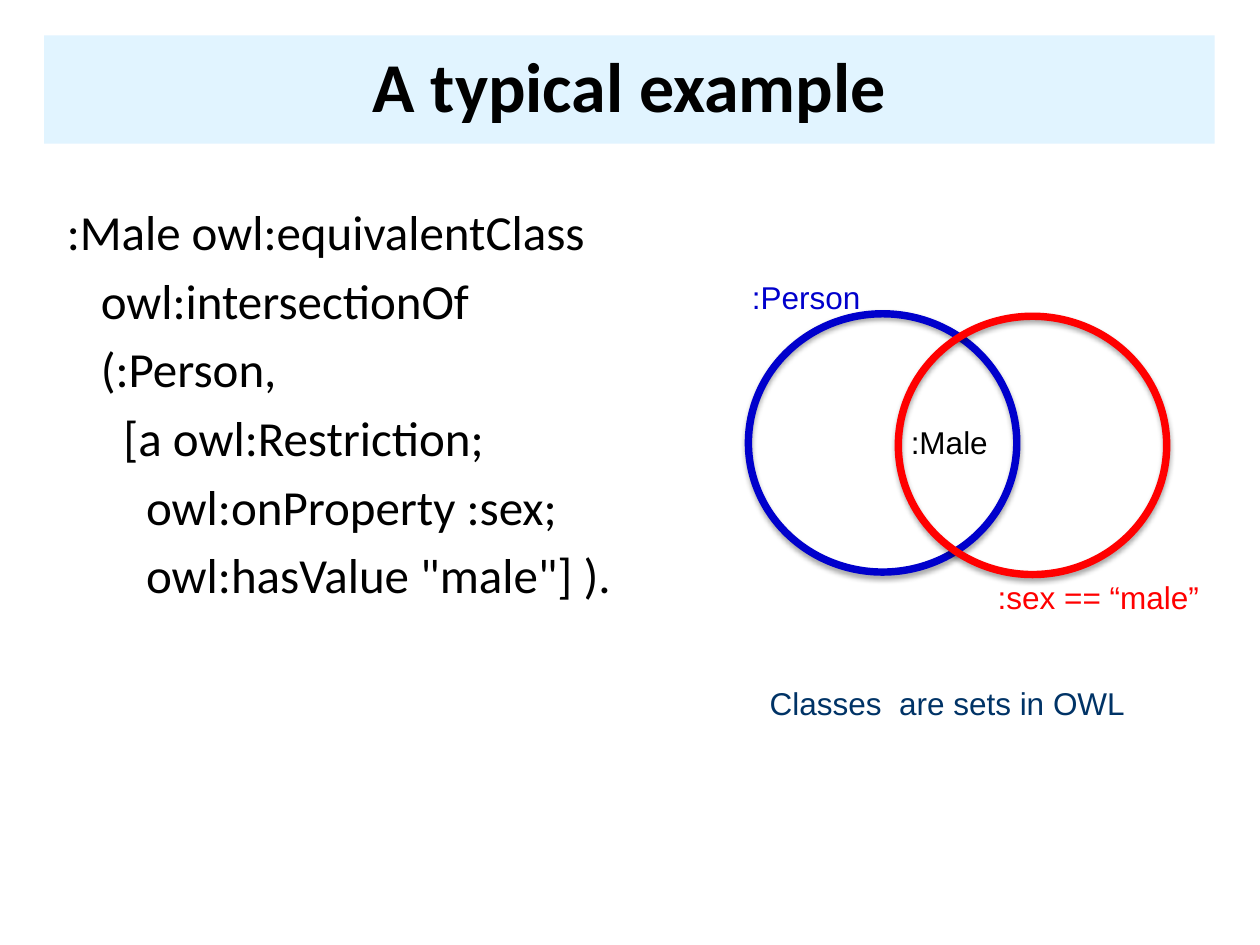
from lxml import etree
from pptx import Presentation
from pptx.dml.color import RGBColor
from pptx.enum import shapes, text
from pptx.oxml.ns import qn
from pptx.util import Inches, Pt

COLORS = {
    "black": "000000",
    "banner": "E1F4FF",
    "person": "0000CC",
    "male": "FF0000",
    "note": "003366",
}


def rgb(name):
    return RGBColor.from_string(COLORS[name])


def write(paragraph, words, *, size=18, font="Arial", color="black",
          bold=False, align=None, line_spacing=None):
    """Add formatted words to a paragraph."""
    run = paragraph.add_run()
    run.text = words
    run.font.size = Pt(size)
    run.font.name = font
    run.font.bold = bold
    run.font.color.rgb = rgb(color)
    if align is not None:
        paragraph.alignment = align
    if line_spacing is not None:
        paragraph.line_spacing = line_spacing


class SlideBuilder:
    heading_font = "Calibri"
    indent_step = 0.09  # width of one indent unit in the code
    circle_size = (2.13, 2.05)
    outline = 4.25

    def __init__(self, slide):
        self.slide = slide

    @staticmethod
    def place(shape, left, top, width, height):
        shape.left, shape.top = Inches(left), Inches(top)
        shape.width, shape.height = Inches(width), Inches(height)

    def title(self, words, *box):
        banner = self.slide.shapes.title
        self.place(banner, *box)
        banner.fill.solid()
        banner.fill.fore_color.rgb = rgb("banner")
        banner.text_frame.vertical_anchor = text.MSO_ANCHOR.MIDDLE
        write(banner.text_frame.paragraphs[0], words, size=40,
              font=self.heading_font, bold=True,
              align=text.PP_ALIGN.CENTER, line_spacing=0.9)

    def code(self, lines, *box):
        body = self.slide.placeholders[1]
        self.place(body, *box)
        frame = body.text_frame
        for number, (depth, words) in enumerate(lines):
            paragraph = frame.add_paragraph() if number else frame.paragraphs[0]
            write(paragraph, words, size=28, font=self.heading_font)
            props = paragraph._p.get_or_add_pPr()
            props.set("marL", str(Inches(depth * self.indent_step)))
            props.set("indent", "0")
            etree.SubElement(props, qn("a:buNone"))

    def circle(self, left, top, color):
        ring = self.slide.shapes.add_shape(
            shapes.MSO_SHAPE.OVAL, Inches(left), Inches(top),
            *map(Inches, self.circle_size))
        ring.fill.background()
        ring.line.color.rgb = rgb(color)
        ring.line.width = Pt(self.outline)
        # Soft shadow straight below the ring
        ring.shadow.inherit = False
        effects = ring._element.spPr.find(qn("a:effectLst"))
        shadow = etree.SubElement(
            effects, qn("a:outerShdw"), blurRad=str(Pt(3.1)),
            dist=str(Pt(1.8)), dir="5400000", rotWithShape="0")
        tint = etree.SubElement(shadow, qn("a:srgbClr"), val=COLORS["black"])
        etree.SubElement(tint, qn("a:alpha"), val="35000")

    def label(self, words, left, top, width, color):
        box = self.slide.shapes.add_textbox(
            Inches(left), Inches(top), Inches(width), Inches(0.4))
        box.text_frame.word_wrap = False
        box.text_frame.auto_size = text.MSO_AUTO_SIZE.SHAPE_TO_FIT_TEXT
        write(box.text_frame.paragraphs[0], words, color=color)


def main():
    deck = Presentation()
    deck.slide_width, deck.slide_height = Inches(10), Inches(7.5)
    page = SlideBuilder(deck.slides.add_slide(deck.slide_layouts[1]))

    # Title and OWL code
    page.title("A typical example", 0.35, 0.28, 9.29, 0.86)
    page.code([
        (0, ":Male owl:equivalentClass"),
        (3, "owl:intersectionOf"),
        (3, "(:Person,"),
        (5, "[a owl:Restriction;"),
        (7, "owl:onProperty :sex;"),
        (7, "owl:hasValue \"male\"] )."),
    ], 0.43, 1.55, 9.14, 5.43)

    # Venn diagram
    page.circle(5.94, 2.49, "person")
    page.circle(7.13, 2.51, "male")

    # Diagram labels and closing note
    page.label(":Person", 5.87, 2.16, 1.07, "person")
    page.label(":sex == “male”", 7.82, 4.54, 1.82, "male")
    page.label(":Male", 7.13, 3.31, 0.82, "black")
    page.label("Classes  are sets in OWL", 6.01, 5.38, 3.05, "note")

    deck.save("out.pptx")


if __name__ == "__main__":
    main()
